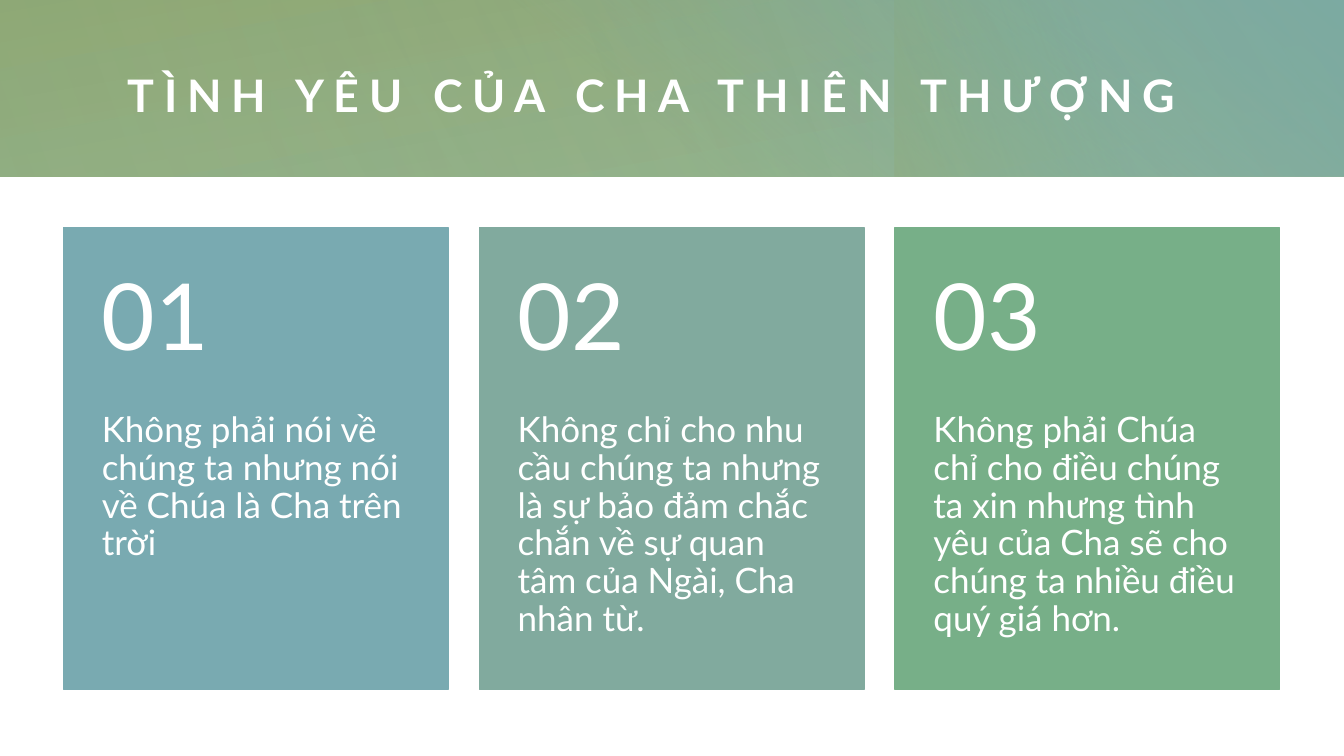
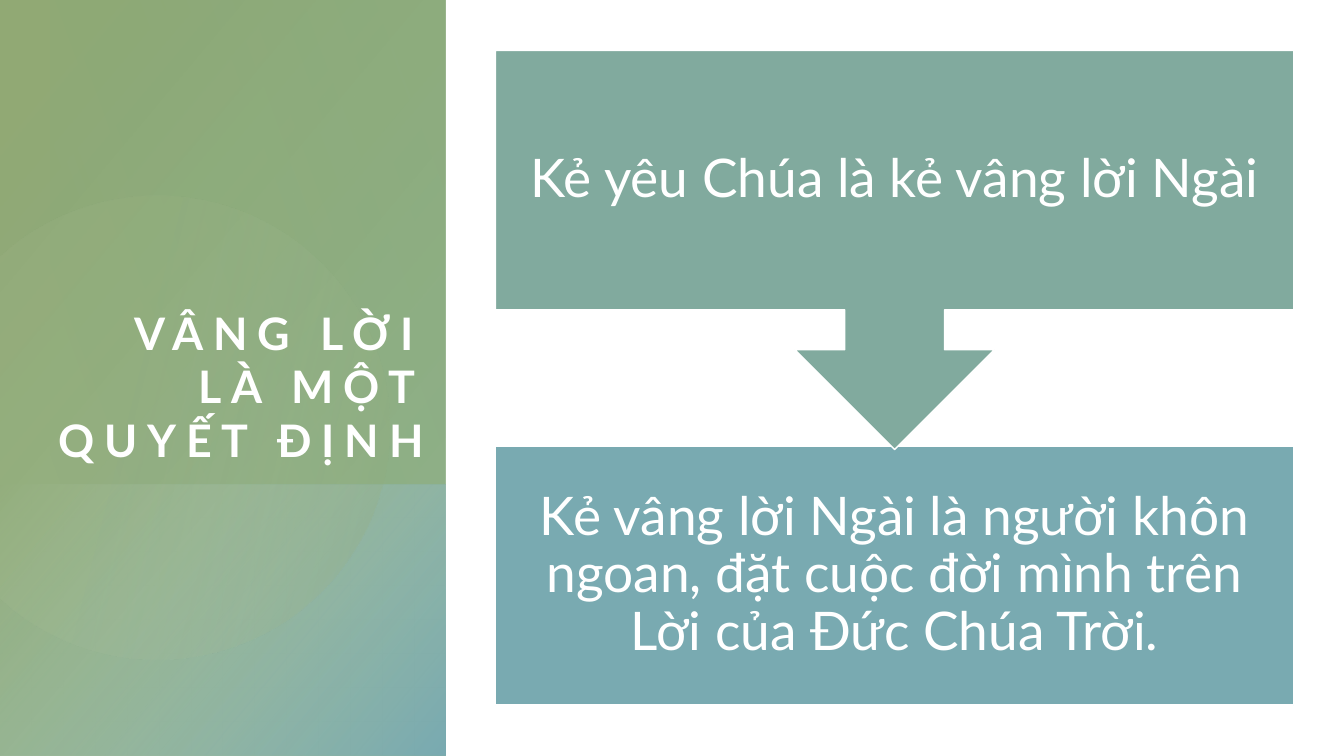
import dataclasses
import math

import lxml.etree
import pptx
import pptx.dml.color
import pptx.enum.shapes
import pptx.enum.text
import pptx.oxml.ns
import pptx.util

SHAPE = pptx.enum.shapes.MSO_SHAPE
ALIGN = pptx.enum.text.PP_ALIGN
ANCHOR = pptx.enum.text.MSO_ANCHOR
SLIDE_WIDTH = pptx.util.Inches(13.333)
SLIDE_HEIGHT = pptx.util.Inches(7.5)


@dataclasses.dataclass(frozen=True)
class Theme:
    font: str = "Lato"
    white: str = "FFFFFF"
    blue: str = "79AAB1"
    teal: str = "81AA9E"
    green: str = "77AF88"
    leaf: str = "86AB81"
    olive: str = "91A974"
    pale_leaf: str = "B6CDB3"
    pale_olive: str = "BDCBAC"
    title_size: int = 32
    title_spacing: int = 7
    number_size: int = 66
    card_size: int = 25
    callout_size: int = 38


THEME = Theme()

BAND_HEIGHT = 23.33
PANEL_WIDTH = 33.15
CARD_LEFT, CARD_TOP, CARD_WIDTH, CARD_HEIGHT = 4.73, 30.13, 28.62, 61.07
CARD_STEP = 30.94
NUMBER_SHARE = 0.4
CALLOUT_LEFT, CALLOUT_WIDTH = 36.87, 59.4

CARDS = [
    ("01", "Không phải nói về chúng ta nhưng nói về Chúa là Cha trên trời", THEME.blue),
    ("02", "Không chỉ cho nhu cầu chúng ta nhưng là sự bảo đảm chắc chắn về sự quan tâm "
           "của Ngài, Cha nhân từ.", THEME.teal),
    ("03", "Không phải Chúa chỉ cho điều chúng ta xin nhưng tình yêu của Cha sẽ cho "
           "chúng ta nhiều điều quý giá hơn.", THEME.green),
]


def color(value):
    return pptx.dml.color.RGBColor.from_string(value)


def area(left, top, width, height):
    return (
        round(SLIDE_WIDTH * left / 100),
        round(SLIDE_HEIGHT * top / 100),
        round(SLIDE_WIDTH * width / 100),
        round(SLIDE_HEIGHT * height / 100),
    )


def set_text(box, text, size, align=ALIGN.LEFT, anchor=ANCHOR.TOP, insets=(0, 0, 0, 0),
             line_spacing=1.0, bold=False):
    frame = box.text_frame
    frame.text = text
    frame.word_wrap = True
    frame.auto_size = pptx.enum.text.MSO_AUTO_SIZE.NONE
    frame.vertical_anchor = anchor
    frame.margin_left, frame.margin_top, frame.margin_right, frame.margin_bottom = (
        pptx.util.Inches(inset) for inset in insets
    )
    para = frame.paragraphs[0]
    para.alignment = align
    para.line_spacing = line_spacing
    span = para.runs[0]
    span.font.name = THEME.font
    span.font.size = pptx.util.Pt(size)
    span.font.bold = bold
    span.font.color.rgb = color(THEME.white)
    return span


def add_title(page, text, bounds, align, anchor):
    title = page.shapes.title
    title.left, title.top, title.width, title.height = area(*bounds)
    span = set_text(title, text, THEME.title_size, align, anchor, bold=True)
    span.font._element.set("spc", str(THEME.title_spacing * 100))
    title.element.getparent().append(title.element)


def add_block(page, bounds, fill, outline, preset=SHAPE.RECTANGLE):
    block = page.shapes.add_shape(preset, *area(*bounds))
    block.shadow.inherit = False
    block.fill.solid()
    block.fill.fore_color.rgb = color(fill)
    block.line.color.rgb = color(outline)
    block.line.width = pptx.util.Pt(1)
    return block


def apply_gradient(shape, angle, stops):
    shape.shadow.inherit = False
    shape.line.fill.background()
    shape.fill.gradient()
    shape.fill.gradient_angle = 360 - angle
    for stop, (position, value, _) in zip(shape.fill.gradient_stops, stops):
        stop.position = position / 100
        stop.color.rgb = color(value)
    tints = shape.element.xpath(".//a:gsLst/a:gs/a:srgbClr")
    for tint, (_, _, opacity) in zip(tints, stops):
        alpha = lxml.etree.SubElement(tint, pptx.oxml.ns.qn("a:alpha"))
        alpha.set("val", str(opacity * 1000))


def add_wash(page, bounds, angle, *stops):
    wash = page.shapes.add_shape(SHAPE.RECTANGLE, *area(*bounds))
    apply_gradient(wash, angle, stops)


def add_clipped_disc(page, center_x, center_y, radius, angle, *stops):
    limit = math.degrees(math.acos(-center_x / radius))
    steps = 72
    turns = [math.radians(limit * (2 * step / steps - 1)) for step in range(steps + 1)]
    points = [
        (pptx.util.Inches(center_x + radius * math.cos(turn)),
         pptx.util.Inches(center_y + radius * math.sin(turn)))
        for turn in turns
    ]
    builder = page.shapes.build_freeform(*points[0])
    builder.add_line_segments(points[1:], close=True)
    apply_gradient(builder.convert_to_shape(), angle, stops)


def add_card(page, index, number, text, fill):
    left = CARD_LEFT + index * CARD_STEP
    number_height = CARD_HEIGHT * NUMBER_SHARE
    add_block(page, (left, CARD_TOP, CARD_WIDTH, CARD_HEIGHT), fill, fill)
    number_box = page.shapes.add_textbox(*area(left, CARD_TOP, CARD_WIDTH, number_height))
    set_text(number_box, number, THEME.number_size, anchor=ANCHOR.MIDDLE,
             insets=(0.38, 0.18, 0.38, 0.18), line_spacing=0.9)
    text_box = page.shapes.add_textbox(
        *area(left, CARD_TOP + number_height, CARD_WIDTH, CARD_HEIGHT - number_height))
    set_text(text_box, text, THEME.card_size, insets=(0.38, 0, 0.38, 0.36), line_spacing=0.9)


def add_callout(page, top, height, text, fill, preset):
    bounds = (CALLOUT_LEFT, top, CALLOUT_WIDTH, height)
    block = add_block(page, bounds, fill, THEME.white, preset)
    set_text(block, text, THEME.callout_size, ALIGN.CENTER, ANCHOR.MIDDLE,
             (0.3, 0.3, 0.3, 0.3), 0.9)


def add_page(deck):
    return deck.slides.add_slide(deck.slide_layouts[5])


def build_love_page(deck):
    page = add_page(deck)
    add_wash(page, (0, 0, 100, BAND_HEIGHT), 260,
             (0, THEME.leaf, 83), (100, THEME.olive, 100))
    add_wash(page, (36.1, 0, 63.9, BAND_HEIGHT), 310,
             (22, THEME.blue, 0), (99, THEME.blue, 100))
    add_wash(page, (66.56, 0, 28.05, BAND_HEIGHT), 160,
             (45, THEME.green, 0), (99, THEME.olive, 33))
    add_wash(page, (20.1, 0, 79.9, BAND_HEIGHT), 150,
             (0, THEME.leaf, 30), (99, THEME.leaf, 0))
    add_wash(page, (0, 0, 64.9, BAND_HEIGHT), 340,
             (0, THEME.leaf, 21), (99, THEME.leaf, 0))
    add_title(page, "TÌNH YÊU CỦA CHA THIÊN THƯỢNG", (9.52, 5.47, 85.12, 14.13),
              ALIGN.LEFT, ANCHOR.MIDDLE)
    for index, card in enumerate(CARDS):
        add_card(page, index, *card)


def build_obedience_page(deck):
    page = add_page(deck)
    add_wash(page, (0, 0, PANEL_WIDTH, 100), 40,
             (8, THEME.olive, 100), (100, THEME.leaf, 89))
    add_wash(page, (0, 64.13, PANEL_WIDTH, 35.87), 40,
             (0, THEME.pale_leaf, 0), (99, THEME.blue, 100))
    add_clipped_disc(page, 1.56, 4.24, 2.3, 14,
                     (36, THEME.pale_olive, 6), (100, THEME.olive, 26))
    add_wash(page, (3.75, 0, PANEL_WIDTH - 3.75, 64.13), 160,
             (0, THEME.leaf, 29), (100, THEME.green, 0))
    add_title(page, "VÂNG LỜI LÀ MỘT QUYẾT ĐỊNH", (3.75, 12.67, 27.82, 49.07),
              ALIGN.RIGHT, ANCHOR.BOTTOM)
    add_callout(page, 59, 34.27,
                "Kẻ vâng lời Ngài là người khôn ngoan, đặt cuộc đời mình trên Lời của Đức Chúa Trời.",
                THEME.blue, SHAPE.RECTANGLE)
    add_callout(page, 6.67, 52.8, "Kẻ yêu Chúa là kẻ vâng lời Ngài",
                THEME.teal, SHAPE.DOWN_ARROW_CALLOUT)


def main():
    deck = pptx.Presentation()
    deck.slide_width = SLIDE_WIDTH
    deck.slide_height = SLIDE_HEIGHT
    build_love_page(deck)
    build_obedience_page(deck)
    deck.save("out.pptx")


if __name__ == "__main__":
    main()
